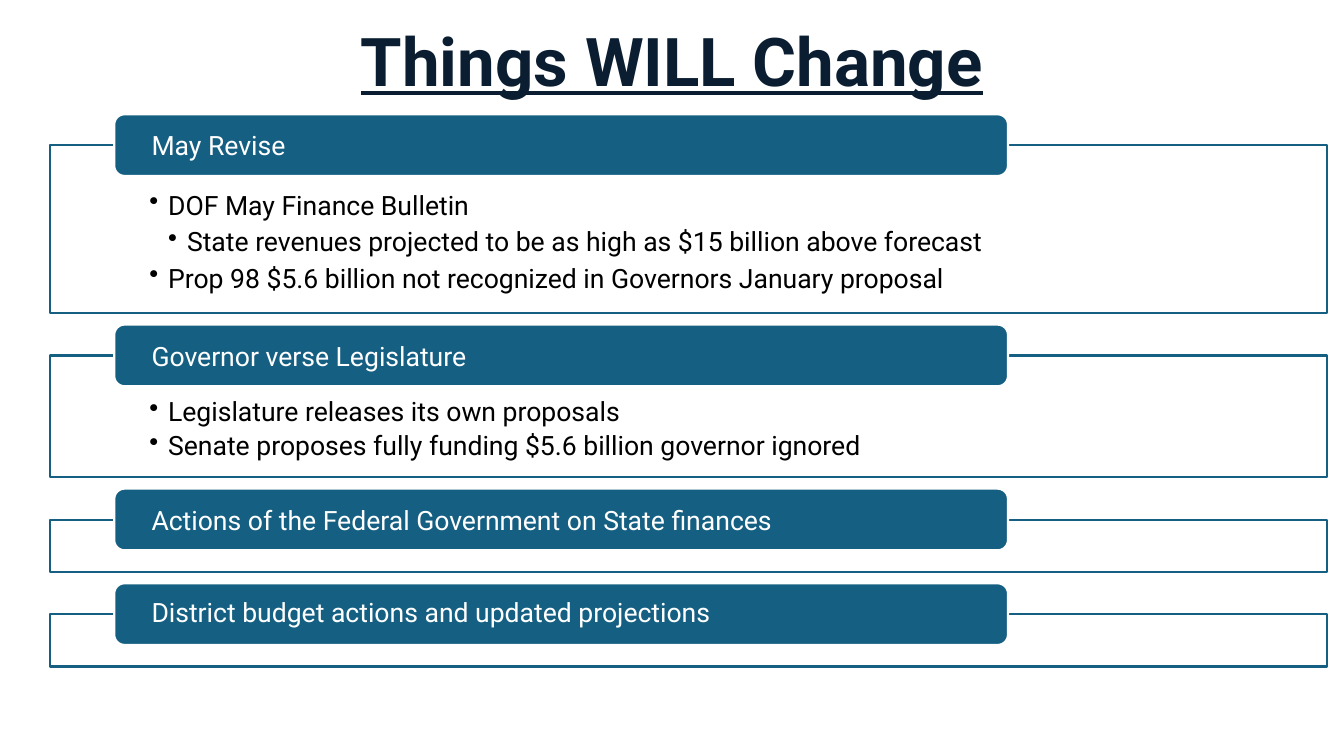
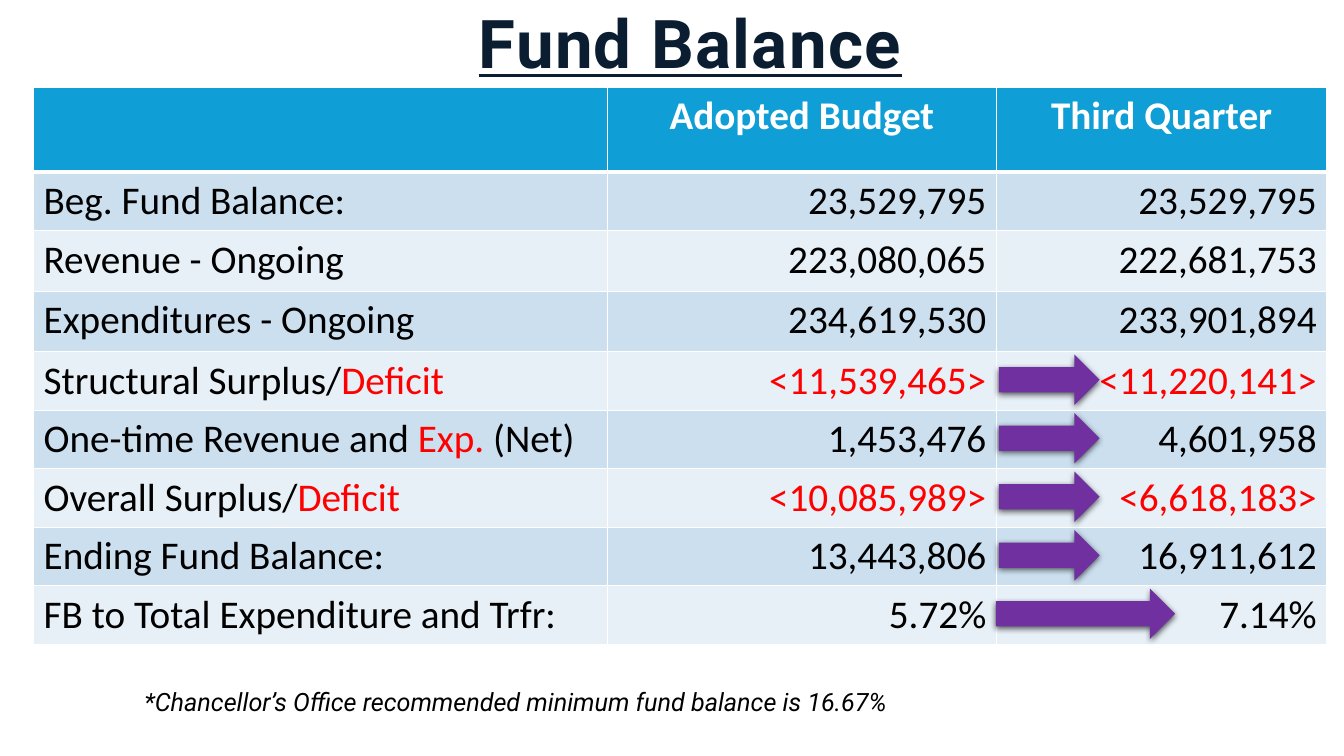
from dataclasses import dataclass
from typing import NamedTuple

from lxml import etree
from pptx import Presentation
from pptx.dml.color import RGBColor
from pptx.enum.shapes import MSO_SHAPE
from pptx.enum.text import MSO_ANCHOR, MSO_AUTO_SIZE, PP_ALIGN
from pptx.oxml.ns import qn
from pptx.util import Pt

RECTANGLE = MSO_SHAPE.RECTANGLE
ROUNDED = MSO_SHAPE.ROUNDED_RECTANGLE
RIGHT_ARROW = MSO_SHAPE.RIGHT_ARROW
LEFT, CENTER, RIGHT = PP_ALIGN.LEFT, PP_ALIGN.CENTER, PP_ALIGN.RIGHT
TOP, MIDDLE, BOTTOM = MSO_ANCHOR.TOP, MSO_ANCHOR.MIDDLE, MSO_ANCHOR.BOTTOM
NO_AUTOFIT = MSO_AUTO_SIZE.NONE

WHITE, BLACK, RED = "FFFFFF", "000000", "FF0000"
NAVY, TEAL, PURPLE = "0B1E31", "156082", "7030A0"
HEADER_BLUE, BAND_COLORS = "0F9ED5", ("CCDFEF", "E7F0F7")
TITLE_FONT, TABLE_FONT = "Roboto", "Calibri"


class Box(NamedTuple):
    left: float
    top: float
    width: float
    height: float


class Bullet(NamedTuple):
    text: str
    level: int = 1


class Span(NamedTuple):
    text: str
    color: str = BLACK


@dataclass(frozen=True)
class Section:
    heading: str
    height: float
    bullets: tuple[Bullet, ...] = ()
    bullet_spacing: float = 1.0
    heading_spacing: float = 1.0


@dataclass(frozen=True)
class FundRow:
    label: tuple[Span, ...]
    adopted: str
    third_quarter: str
    height: float = 41.8
    arrow: Box | None = None


SECTIONS = (
    Section("May Revise", 120, (
        Bullet("DOF May Finance Bulletin"),
        Bullet("State revenues projected to be as high as $15 billion above forecast", 2),
        Bullet("Prop 98 $5.6 billion not recognized in Governors January proposal"),
    )),
    Section("Governor verse Legislature", 87, (
        Bullet("Legislature releases its own proposals"),
        Bullet("Senate proposes fully funding $5.6 billion governor ignored"),
    ), bullet_spacing=0.9),
    Section("Actions of the Federal Government on State finances", 37.4),
    Section("District budget actions and updated projections", 37.4, heading_spacing=0.9),
)
FRAME_LEFT, FRAME_TOP, FRAME_WIDTH, FRAME_GAP = 36, 103.7, 912, 30.2
HEADING_LEFT, HEADING_WIDTH, HEADING_HEIGHT = 81.6, 638.4, 44
SECTION_SIZE, BULLET_INDENT, BULLET_GAP = 19, 13.5, 3.3

SHORT_ARROW = Box(713.5, 2, 72, 36)
LONG_ARROW = Box(711.4, 2, 128, 36)
TABLE_HEADINGS = ("", "Adopted Budget", "Third Quarter")
FUND_ROWS = (
    FundRow((Span("Beg. Fund Balance:"),), "23,529,795", "23,529,795"),
    FundRow((Span("Revenue - Ongoing"),), "223,080,065", "222,681,753", 43.2),
    FundRow((Span("Expenditures - Ongoing"),), "234,619,530", "233,901,894", 43.2),
    FundRow((Span("Structural Surplus/"), Span("Deficit", RED)),
            "<11,539,465>", "<11,220,141>", arrow=SHORT_ARROW),
    FundRow((Span("One-time Revenue and "), Span("Exp. ", RED), Span("(Net)")),
            "1,453,476", "4,601,958", arrow=SHORT_ARROW),
    FundRow((Span("Overall Surplus/"), Span("Deficit", RED)),
            "<10,085,989>", "<6,618,183>", arrow=SHORT_ARROW),
    FundRow((Span("Ending Fund Balance:"),), "13,443,806", "16,911,612", arrow=SHORT_ARROW),
    FundRow((Span("FB to Total Expenditure and Trfr:"),), "5.72%", "7.14%", arrow=LONG_ARROW),
)
TABLE_LEFT, TABLE_TOP, HEADER_HEIGHT = 24, 62.6, 60.5
COLUMN_WIDTHS = (409.7, 278, 236)
TABLE_SIZE = 28


def rgb(value: str) -> RGBColor:
    return RGBColor.from_string(value)


def points(box: Box) -> list[Pt]:
    return [Pt(length) for length in box]


def style_run(run, size: float, color: str, font: str = TITLE_FONT,
              bold: bool = False, italic: bool = False) -> None:
    run.font.name = font
    run.font.size = Pt(size)
    run.font.color.rgb = rgb(color)
    run.font.bold = bold
    run.font.italic = italic


def add_titled_slide(presentation, text: str, box: Box, anchor, spacing: int = 0):
    slide = presentation.slides.add_slide(presentation.slide_layouts[5])
    title = slide.shapes.title
    title.left, title.top, title.width, title.height = points(box)
    frame = title.text_frame
    frame.text = text
    frame.word_wrap = True
    frame.auto_size = NO_AUTOFIT
    frame.vertical_anchor = anchor
    paragraph = frame.paragraphs[0]
    paragraph.alignment = CENTER
    paragraph.line_spacing = 0.9
    run = paragraph.runs[0]
    style_run(run, 48, NAVY, bold=True)
    run.font.underline = True
    if spacing:
        run._r.get_or_add_rPr().set("spc", str(spacing * 100))
    return slide


def add_block(slide, kind, box: Box, fill: str, line: str | None = None):
    shape = slide.shapes.add_shape(kind, *points(box))
    shape.shadow.inherit = False
    shape.fill.solid()
    shape.fill.fore_color.rgb = rgb(fill)
    if line:
        shape.line.color.rgb = rgb(line)
        shape.line.width = Pt(1.5)
    else:
        shape.line.fill.background()
    return shape


def set_frame(shape, anchor, side: float, top: float, bottom: float):
    frame = shape.text_frame
    frame.word_wrap = True
    frame.vertical_anchor = anchor
    frame.margin_left = frame.margin_right = Pt(side)
    frame.margin_top, frame.margin_bottom = Pt(top), Pt(bottom)
    return frame


def write_bullets(shape, section: Section) -> None:
    frame = set_frame(shape, TOP, 70.6, 31, 10.8)
    frame.text = "\n".join(bullet.text for bullet in section.bullets)
    for paragraph, bullet in zip(frame.paragraphs, section.bullets):
        paragraph.alignment = LEFT
        paragraph.line_spacing = section.bullet_spacing
        paragraph.space_after = Pt(BULLET_GAP)
        paragraph.level = bullet.level
        properties = paragraph._p.get_or_add_pPr()
        properties.set("marL", str(Pt(BULLET_INDENT * bullet.level)))
        properties.set("indent", str(-Pt(BULLET_INDENT)))
        etree.SubElement(properties, qn("a:buChar")).set("char", "•")
        style_run(paragraph.runs[0], SECTION_SIZE, BLACK)


def add_section(slide, section: Section, top: float) -> None:
    frame_box = Box(FRAME_LEFT, top, FRAME_WIDTH, section.height)
    outline = add_block(slide, RECTANGLE, frame_box, WHITE, TEAL)
    if section.bullets:
        write_bullets(outline, section)
    heading_box = Box(HEADING_LEFT, top - HEADING_HEIGHT / 2, HEADING_WIDTH, HEADING_HEIGHT)
    heading = add_block(slide, ROUNDED, heading_box, TEAL, WHITE)
    frame = set_frame(heading, MIDDLE, 24.5, 0, 0)
    frame.text = section.heading
    paragraph = frame.paragraphs[0]
    paragraph.alignment = LEFT
    paragraph.line_spacing = section.heading_spacing
    style_run(paragraph.runs[0], SECTION_SIZE, WHITE)


def set_borders(cell, top_width: float, bottom_width: float) -> None:
    properties = cell._tc.get_or_add_tcPr()
    widths = {"a:lnL": 1, "a:lnR": 1, "a:lnT": top_width, "a:lnB": bottom_width}
    for position, (tag, width) in enumerate(widths.items()):
        line = etree.Element(qn(tag), w=str(Pt(width)))
        fill = etree.SubElement(line, qn("a:solidFill"))
        etree.SubElement(fill, qn("a:srgbClr")).set("val", WHITE)
        properties.insert(position, line)


def write_cell(cell, spans: tuple[Span, ...], alignment, fill: str, bold: bool = False) -> None:
    cell.fill.solid()
    cell.fill.fore_color.rgb = rgb(fill)
    paragraph = cell.text_frame.paragraphs[0]
    paragraph.alignment = alignment
    for span in spans:
        run = paragraph.add_run()
        run.text = span.text
        style_run(run, TABLE_SIZE, span.color, TABLE_FONT, bold)


def amount(text: str) -> tuple[Span, ...]:
    return (Span(text, RED if text.startswith("<") else BLACK),)


def add_fund_table(slide) -> None:
    heights = [HEADER_HEIGHT] + [row.height for row in FUND_ROWS]
    box = Box(TABLE_LEFT, TABLE_TOP, sum(COLUMN_WIDTHS), sum(heights))
    table = slide.shapes.add_table(len(heights), len(COLUMN_WIDTHS), *points(box)).table
    for column, width in zip(table.columns, COLUMN_WIDTHS):
        column.width = Pt(width)
    for row, height in zip(table.rows, heights):
        row.height = Pt(height)
    for index, heading in enumerate(TABLE_HEADINGS):
        spans = (Span(heading, WHITE),) if heading else ()
        write_cell(table.cell(0, index), spans, CENTER, HEADER_BLUE, True)
        set_borders(table.cell(0, index), 1, 3)
    for number, row in enumerate(FUND_ROWS, 1):
        contents = (row.label, amount(row.adopted), amount(row.third_quarter))
        for index, spans in enumerate(contents):
            cell = table.cell(number, index)
            write_cell(cell, spans, RIGHT if index else LEFT, BAND_COLORS[(number - 1) % 2])
            set_borders(cell, 3 if number == 1 else 1, 1)


def add_arrow(slide, box: Box) -> None:
    arrow = add_block(slide, RIGHT_ARROW, box, PURPLE)
    effects = arrow._element.spPr.find(qn("a:effectLst"))
    shadow = etree.SubElement(effects, qn("a:outerShdw"), blurRad=str(Pt(4.5)),
                              dist=str(Pt(1.5)), dir="5400000", rotWithShape="0")
    color = etree.SubElement(shadow, qn("a:srgbClr"), val=BLACK)
    etree.SubElement(color, qn("a:alpha"), val="63000")


def add_arrows(slide) -> None:
    top = TABLE_TOP + HEADER_HEIGHT
    for row in FUND_ROWS:
        if row.arrow:
            add_arrow(slide, row.arrow._replace(top=top + row.arrow.top))
        top += row.height


def add_footnote(slide, text: str, box: Box) -> None:
    frame = slide.shapes.add_textbox(*points(box)).text_frame
    frame.word_wrap = False
    frame.text = text
    style_run(frame.paragraphs[0].runs[0], 18, BLACK, italic=True)


def build_changes(presentation) -> None:
    slide = add_titled_slide(presentation, "Things WILL Change", Box(78, 25, 804, 42), MIDDLE)
    top = FRAME_TOP
    for section in SECTIONS:
        add_section(slide, section, top)
        top += section.height + FRAME_GAP


def build_fund_balance(presentation) -> None:
    slide = add_titled_slide(presentation, "Fund Balance", Box(67, 21, 852, 42), BOTTOM, 1)
    add_fund_table(slide)
    add_arrows(slide)
    add_footnote(slide, "*Chancellor’s Office recommended minimum fund balance is 16.67%",
                 Box(96, 486.7, 558, 29))


def main() -> None:
    presentation = Presentation()
    presentation.slide_width, presentation.slide_height = Pt(960), Pt(540)
    build_changes(presentation)
    build_fund_balance(presentation)
    presentation.save("out.pptx")


if __name__ == "__main__":
    main()
